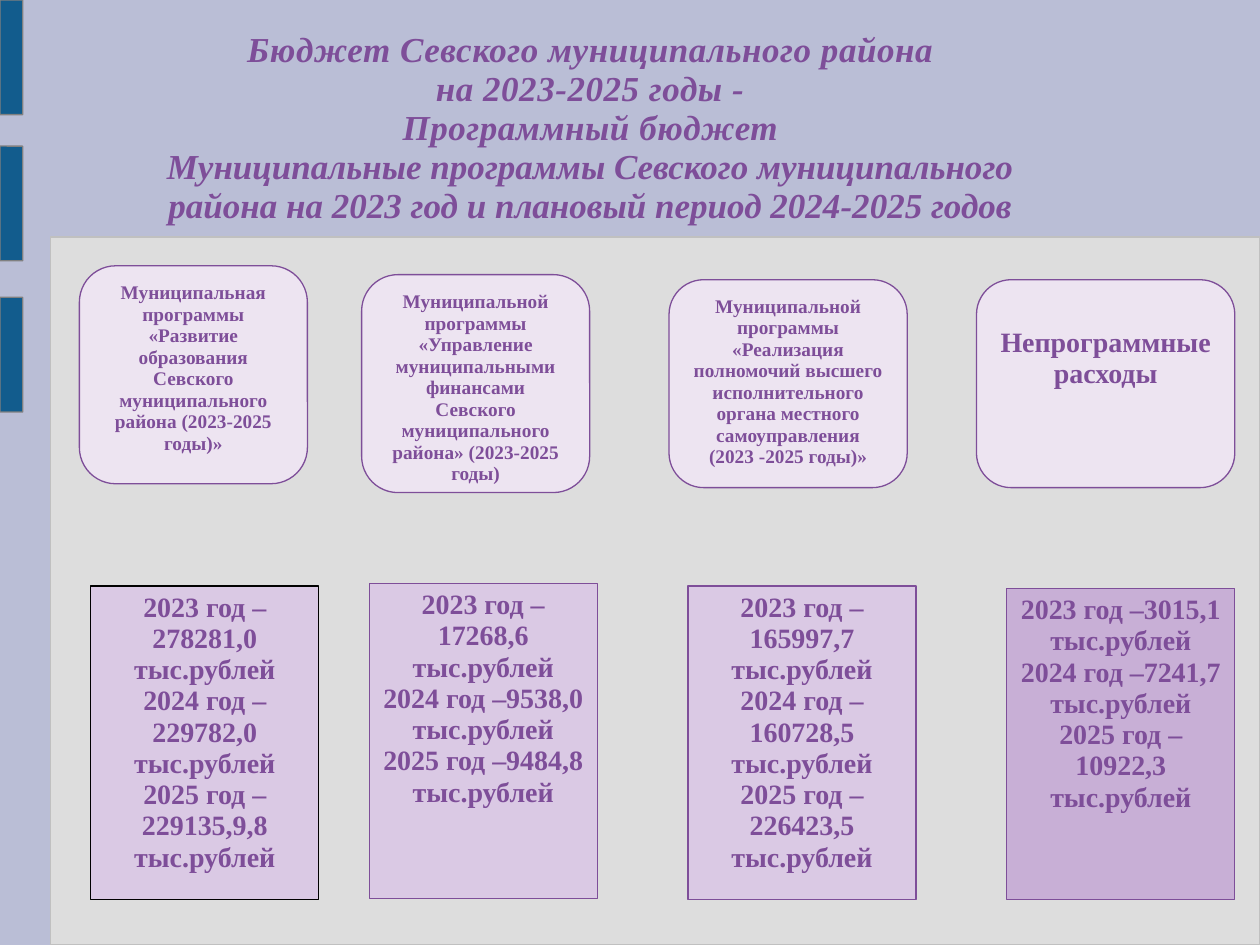
import pptx
import pptx.dml.color
import pptx.enum.shapes
import pptx.enum.text
import pptx.util
from dataclasses import dataclass

Inches = pptx.util.Inches
Pt = pptx.util.Pt
KIND = pptx.enum.shapes.MSO_SHAPE
UNIT = "тыс.рублей"
YEARS = (2023, 2024, 2025)


@dataclass(frozen=True)
class Theme:
    """Colours and type sizes of the slide."""
    back: str = "BABED6"
    panel: str = "DDDDDD"
    edge: str = "C0C0C0"
    bar: str = "125C8D"
    rim: str = "808080"
    ink: str = "7E4E99"
    card: str = "EDE4F1"
    sum: str = "DAC9E4"
    other: str = "C8AFD6"
    black: str = "000000"
    font: str = "Times New Roman"
    head: float = 20
    big: float = 16
    small: float = 11


THEME = Theme()

TITLE = (
    ("Бюджет Севского муниципального района", 30),
    ("на 2023-2025 годы -\vПрограммный бюджет", 30),
    ("Муниципальные программы Севского муниципального района "
     "на 2023 год и плановый период 2024-2025 годов", 0),
)

CARDS = (
    ((0.63, 2.11, 1.81, 1.73), THEME.small, 0.05,
     "Муниципальная программы «Развитие образования Севского "
     "муниципального района (2023-2025 годы)»"),
    ((2.87, 2.18, 1.81, 1.73), THEME.small, 0.05,
     "Муниципальной программы «Управление муниципальными финансами "
     "Севского муниципального района» (2023-2025 годы)"),
    ((5.31, 2.22, 1.89, 1.65), THEME.small, 0.05,
     "Муниципальной программы «Реализация полномочий высшего "
     "исполнительного органа местного самоуправления (2023 -2025 годы)»"),
    ((7.75, 2.22, 2.05, 1.65), THEME.big, 0.3, "Непрограммные расходы"),
)

SUMS = (
    ((0.72, 4.65, 1.81, 2.49), THEME.sum, THEME.black,
     ("278281,0", "229782,0", "229135,9,8")),
    ((2.93, 4.63, 1.81, 2.5), THEME.sum, THEME.ink,
     ("17268,6", "9538,0", "9484,8")),
    ((5.46, 4.65, 1.81, 2.49), THEME.sum, THEME.ink,
     ("165997,7", "160728,5", "226423,5")),
    ((7.99, 4.67, 1.81, 2.47), THEME.other, THEME.ink,
     ("3015,1", "7241,7", "10922,3")),
)


def paint(fill, code):
    """Set a solid colour on a fill."""
    fill.solid()
    fill.fore_color.rgb = pptx.dml.color.RGBColor.from_string(code)


def add_box(slide, area, fill, line, kind=KIND.RECTANGLE, bend=None):
    """Add a flat shape with a thin outline."""
    shape = slide.shapes.add_shape(kind, *map(Inches, area))
    shape.shadow.inherit = False
    paint(shape.fill, fill)
    paint(shape.line.fill, line)
    shape.line.width = Pt(0.75)
    if bend is not None:
        shape.adjustments[0] = bend
    return shape


def set_up(frame, top=0.05):
    """Wrap a text frame and hang its text from the top."""
    frame.word_wrap = True
    frame.vertical_anchor = pptx.enum.text.MSO_ANCHOR.TOP
    frame.margin_top = Inches(top)


def add_text(frame, text, size=THEME.big, slant=False, gap=0):
    """Write one centred paragraph into a text frame."""
    para = frame.paragraphs[0]
    if para.text:
        para = frame.add_paragraph()
    para.text = text
    para.alignment = pptx.enum.text.PP_ALIGN.CENTER
    para.line_spacing = 0.93
    for run in para.runs:
        font = run.font
        font.name, font.size = THEME.font, Pt(size)
        font.bold, font.italic = True, slant
        paint(font.fill, THEME.ink)
        if gap:
            font._element.set("spc", str(gap))


def add_card(slide, area, size, top, text):
    """Add a rounded card that names a programme."""
    shape = add_box(slide, area, THEME.card, THEME.ink,
                    KIND.ROUNDED_RECTANGLE)
    set_up(shape.text_frame, top)
    add_text(shape.text_frame, text, size=size)


def add_sums(slide, area, fill, line, sums):
    """Add a box with the yearly sums of a programme."""
    frame = add_box(slide, area, fill, line).text_frame
    set_up(frame)
    for year, value in zip(YEARS, sums):
        add_text(frame, f"{year} год –{value}")
        add_text(frame, UNIT)


def add_title(slide):
    """Add the slide title."""
    area = map(Inches, (0.91, 0.2, 7.55, 2.23))
    frame = slide.shapes.add_textbox(*area).text_frame
    set_up(frame)
    for text, gap in TITLE:
        add_text(frame, text, size=THEME.head, slant=True, gap=gap)


def add_decor(slide):
    """Add the background, the panel and the side bars."""
    paint(slide.background.fill, THEME.back)
    add_box(slide, (0.4, 1.88, 9.6, 5.62), THEME.panel, THEME.edge,
            KIND.ROUNDED_RECTANGLE, 0)
    for top in (0, 1.16, 2.36):
        add_box(slide, (0, top, 0.18, 0.91), THEME.bar, THEME.rim,
                KIND.ROUNDED_RECTANGLE, 0.01)


def main():
    """Build the slide and save it."""
    deck = pptx.Presentation()
    deck.slide_width, deck.slide_height = Inches(10), Inches(7.5)
    slide = deck.slides.add_slide(deck.slide_layouts[6])
    add_decor(slide)
    for card in CARDS:
        add_card(slide, *card)
    for item in SUMS:
        add_sums(slide, *item)
    add_title(slide)
    deck.save("out.pptx")


if __name__ == "__main__":
    main()
